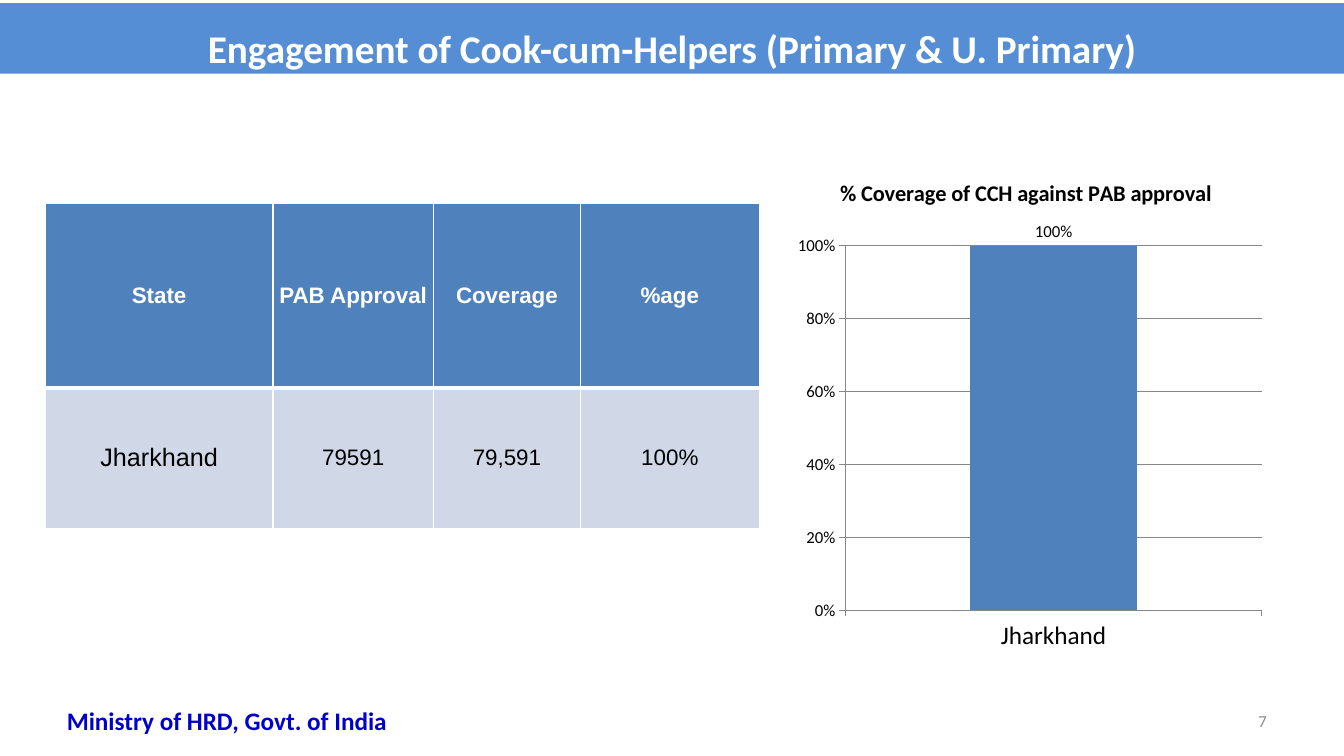
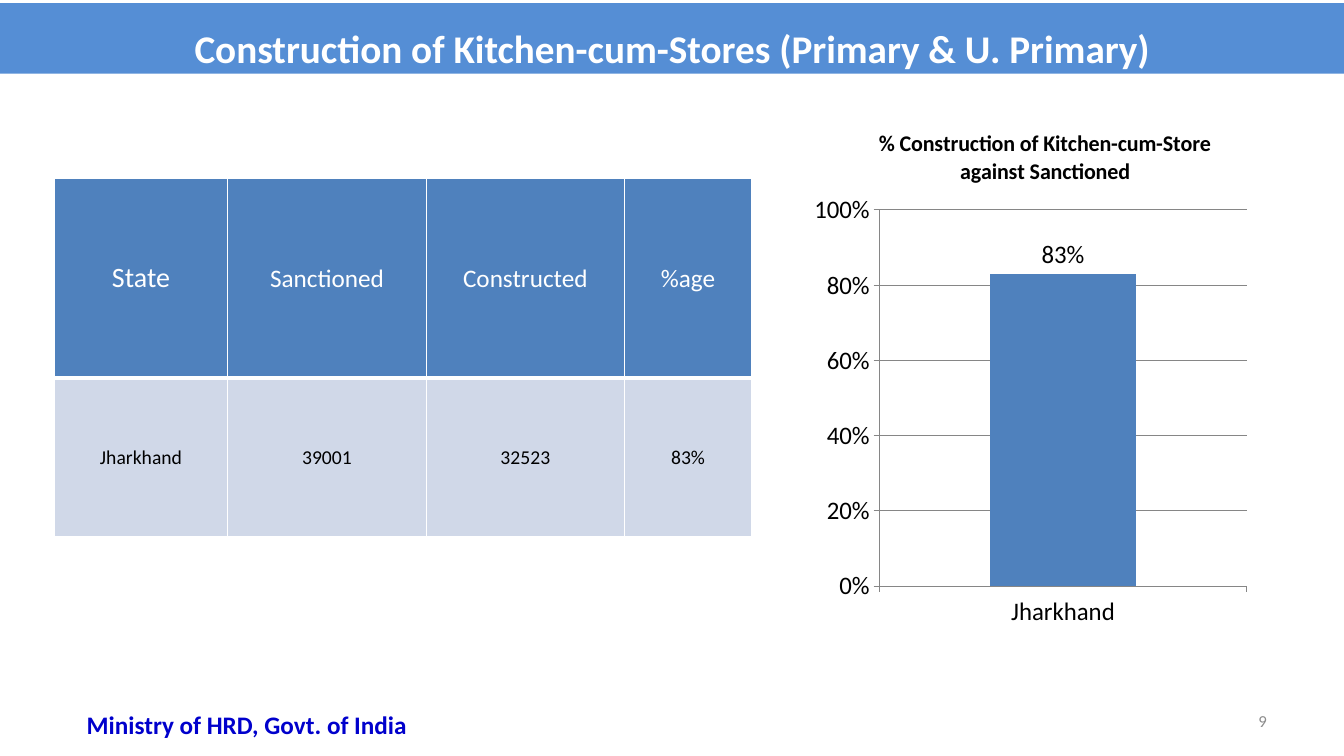
"""Build two slides on cook-cum-helpers and kitchen-cum-stores."""
from lxml.etree import SubElement
from pptx import Presentation
from pptx.chart.data import CategoryChartData
from pptx.dml.color import RGBColor
from pptx.enum.chart import XL_CHART_TYPE, XL_LABEL_POSITION, XL_TICK_MARK
from pptx.enum.shapes import MSO_SHAPE
from pptx.enum.text import MSO_ANCHOR, MSO_AUTO_SIZE, PP_ALIGN
from pptx.oxml import parse_xml
from pptx.oxml.ns import nsdecls, qn
from pptx.util import Cm, Pt

COLORS = {
    "band": "558ED5", "accent": "4F81BD", "row": "D0D8E8", "white": "FFFFFF",
    "black": "000000", "footer": "0000CC", "number": "8C8C8C", "grid": "868686",
}
WIDTH, HEIGHT = 33.87, 19.05


def rgb(name):
    return RGBColor.from_string(COLORS[name])


def set_fill(target, color):
    target.fill.solid()
    target.fill.fore_color.rgb = rgb(color)


def set_font(font, size, color="black", bold=False, name="Calibri"):
    font.size = Pt(size)
    font.name = name
    font.bold = bold
    font.color.rgb = rgb(color)


def set_text(tf, text, align=PP_ALIGN.CENTER, spacing=None, **font):
    p = tf.paragraphs[0]
    p.alignment = align
    if spacing:
        p.line_spacing = spacing
    r = p.add_run()
    r.text = text
    set_font(r.font, **font)


def add_box(s, text, box, anchor=MSO_ANCHOR.TOP, grow=False, **kwargs):
    tf = s.shapes.add_textbox(*map(Cm, box)).text_frame
    tf.word_wrap = True
    tf.vertical_anchor = anchor
    if grow:
        tf.auto_size = MSO_AUTO_SIZE.SHAPE_TO_FIT_TEXT
    set_text(tf, text, **kwargs)


def add_frame(s, title, number, footer_at):
    sp = s.shapes.add_shape(MSO_SHAPE.RECTANGLE, *map(Cm, (0, 0.08, WIDTH, 1.78)))
    sp.shadow.inherit = False
    set_fill(sp, "band")
    sp.line.fill.background()
    tf = sp.text_frame
    tf.word_wrap = True
    tf.auto_size = MSO_AUTO_SIZE.SHAPE_TO_FIT_TEXT
    tf.vertical_anchor = MSO_ANCHOR.MIDDLE
    set_text(tf, title, spacing=1.4, size=28, color="white", bold=True)
    add_box(s, number, (24.28, 17.65, 7.9, 1.02), anchor=MSO_ANCHOR.MIDDLE,
            align=PP_ALIGN.RIGHT, size=12, color="number")
    add_box(s, "Ministry of HRD, Govt. of India", (*footer_at, 9.96, 1.02),
            grow=True, size=18, color="footer", bold=True)


def set_borders(cell, top, bottom):
    tcPr = cell._tc.get_or_add_tcPr()
    for side, width in (("L", 1), ("R", 1), ("T", top), ("B", bottom)):
        ln = SubElement(tcPr, qn(f"a:ln{side}"), w=str(Pt(width)))
        fill = SubElement(ln, qn("a:solidFill"))
        SubElement(fill, qn("a:srgbClr"), val=COLORS["white"])


def add_table(s, at, widths, heights, rows, sizes, font, bold):
    box = (*at, sum(widths), sum(heights))
    table = s.shapes.add_table(len(rows), len(widths), *map(Cm, box)).table
    table.horz_banding = False
    for col, width in zip(table.columns, widths):
        col.width = Cm(width)
    for i, (row, height) in enumerate(zip(table.rows, heights)):
        row.height = Cm(height)
        header = i == 0
        for cell, text, size in zip(row.cells, rows[i], sizes[i]):
            cell.margin_left = cell.margin_right = 0
            cell.margin_top = cell.margin_bottom = 0
            cell.vertical_anchor = MSO_ANCHOR.MIDDLE
            set_borders(cell, *((1, 3) if header else (3, 1)))
            set_fill(cell, "accent" if header else "row")
            set_text(cell.text_frame, text, size=size, name=font,
                     color="white" if header else "black", bold=header and bold)


def set_plot_area(chart, plot):
    area = chart.element.find(".//" + qn("c:plotArea"))
    for layout in area.findall(qn("c:layout")):
        area.remove(layout)
    sides = "".join(f'<c:{tag} val="{v}"/>' for tag, v in zip("xywh", plot))
    area.insert(0, parse_xml(
        f'<c:layout {nsdecls("c")}><c:manualLayout><c:layoutTarget val="inner"/>'
        f'<c:xMode val="edge"/><c:yMode val="edge"/>{sides}'
        "</c:manualLayout></c:layout>"))


def set_line(line):
    line.color.rgb = rgb("grid")
    line.width = Pt(0.75)


def add_column_chart(s, box, title, value, plot, value_size):
    data = CategoryChartData(number_format="0%")
    data.categories = ["Jharkhand"]
    data.add_series(title, [value])
    chart = s.shapes.add_chart(
        XL_CHART_TYPE.COLUMN_CLUSTERED, *map(Cm, box), data).chart
    set_font(chart.font, 18)
    chart.has_legend = False
    chart.has_title = True
    set_text(chart.chart_title.text_frame, title, size=16, bold=True)
    chart.chart_title.include_in_layout = False
    set_plot_area(chart, plot)

    bars = chart.plots[0]
    bars.gap_width = 150
    bars.vary_by_categories = False
    set_fill(bars.series[0].format, "accent")
    bars.has_data_labels = True
    labels = bars.data_labels
    labels.show_value = True
    labels.number_format = "0%"
    labels.number_format_is_linked = False
    labels.position = XL_LABEL_POSITION.OUTSIDE_END
    set_font(labels.font, value_size)

    axis = chart.value_axis
    axis.minimum_scale, axis.maximum_scale, axis.major_unit = 0, 1, 0.2
    axis.tick_labels.number_format = "0%"
    axis.tick_labels.number_format_is_linked = False
    axis.has_major_gridlines = True
    set_line(axis.major_gridlines.format.line)
    for ax, size in ((axis, value_size), (chart.category_axis, 18)):
        ax.major_tick_mark = XL_TICK_MARK.OUTSIDE
        set_line(ax.format.line)
        set_font(ax.tick_labels.font, size)


def main():
    prs = Presentation()
    prs.slide_width, prs.slide_height = Cm(WIDTH), Cm(HEIGHT)
    blank = prs.slide_layouts[6]

    s = prs.slides.add_slide(blank)
    add_frame(s, "Engagement of Cook-cum-Helpers (Primary & U. Primary)", "7",
              (0.74, 17.65))
    add_table(s, (1.14, 5.13), (5.74, 4.04, 3.71, 4.5), (4.65, 3.53),
              (("State", "PAB Approval", "Coverage", "%age"),
               ("Jharkhand", "79591", "79,591", "100%")),
              ((16, 16, 16, 16), (18, 16, 16, 16)), font="Arial", bold=True)
    add_column_chart(s, (19.53, 3.99, 12.65, 12.95),
                     "% Coverage of CCH against PAB approval", 1,
                     (0.14, 0.17, 0.83, 0.71), value_size=12)

    s = prs.slides.add_slide(blank)
    add_frame(s, "Construction of Kitchen-cum-Stores (Primary & U. Primary)", "9",
              (1.24, 17.75))
    add_table(s, (1.37, 4.5), (4.37, 5, 5, 3.2), (5.03, 3.99),
              (("State", "Sanctioned", "Constructed", "%age"),
               ("Jharkhand", "39001", "32523", "83%")),
              ((20, 18, 18, 18), (14, 14, 14, 14)), font="Calibri", bold=False)
    add_column_chart(s, (20.52, 2.72, 11.46, 13.54),
                     "% Construction of Kitchen-cum-Store against Sanctioned", 0.83,
                     (0.13, 0.19, 0.82, 0.7), value_size=18)

    prs.save("out.pptx")


if __name__ == "__main__":
    main()
